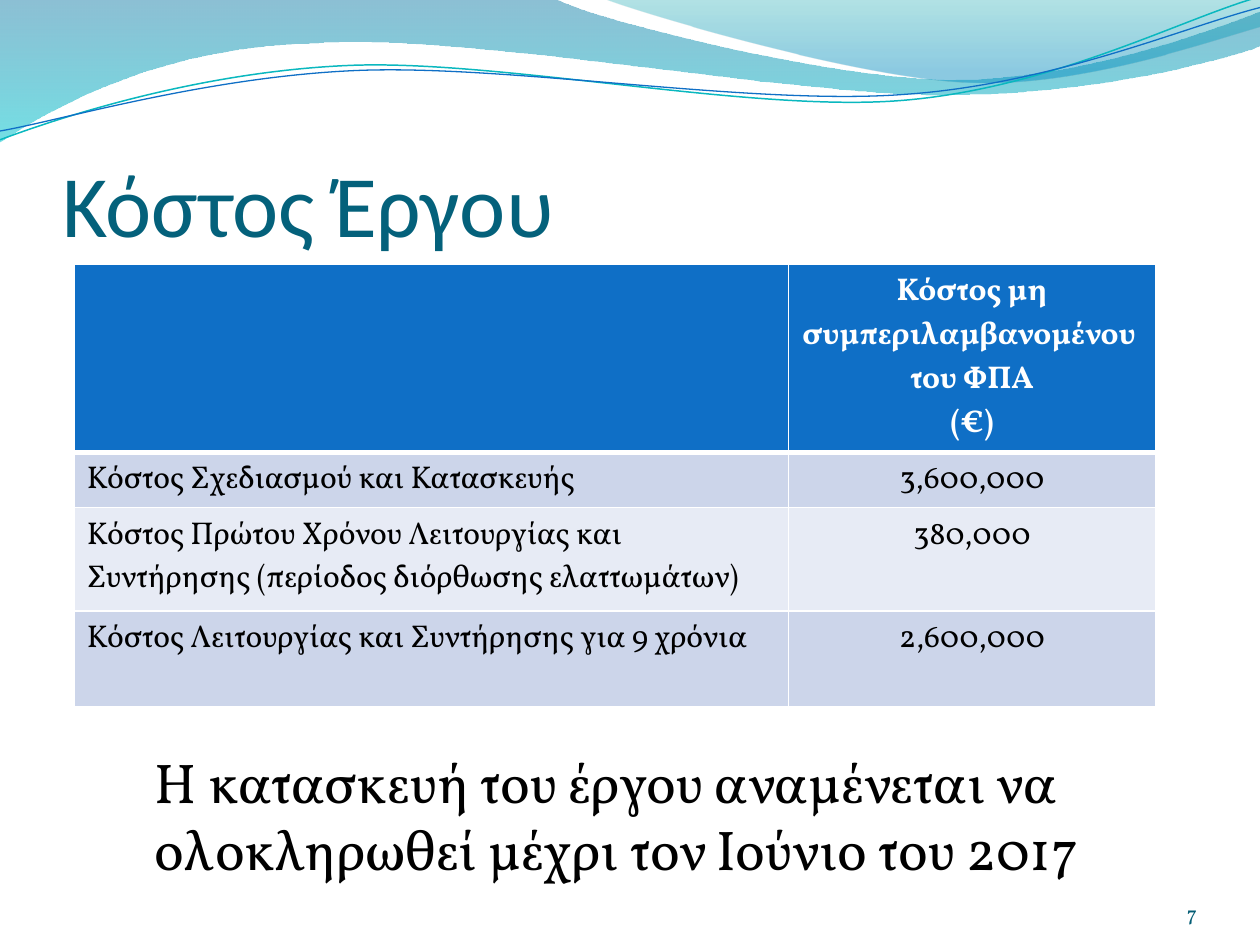
from dataclasses import dataclass

from lxml.etree import SubElement
from pptx import Presentation
from pptx.dml.color import RGBColor
from pptx.enum.text import MSO_ANCHOR, PP_ALIGN
from pptx.oxml.ns import qn
from pptx.util import Inches, Pt

COLUMNS, ROWS = 100, 75  # slide grid, with square modules
MODULE = Inches(0.1)


@dataclass(frozen=True)
class Theme:
    heading_font: str = "Calibri"
    body_font: str = "Vollkorn"
    title_size: int = 50
    body_size: int = 32
    table_size: int = 18
    number_size: int = 12
    title: str = "04617B"
    number: str = "045D75"
    text: str = "000000"
    white: str = "FFFFFF"
    header: str = "0F6FC6"
    bands: tuple = ("CCD5EA", "E7EBF5")
    # Gradient stops: position, colour, opacity in percent
    back_wave: tuple = ((0, "0074A1", 45), (1, "00C6CF", 55))
    front_wave: tuple = ((0, "00A1A9", 30), (0.8, "008BBF", 45))
    teal_line: str = "0AB8BF"
    blue_line: str = "0F6FC6"


THEME = Theme()

# Outlines in grid modules: a pair is a corner, six numbers are a Bézier curve
BACK_WAVE = [
    (0, 0), (44, -0.1), (47.6, 1.7, 66.4, 6.3, 75.8, 6.3),
    (85.3, 6.3, 95.8, 2.6, 100, 0.9), (100.1, 3.6),
    (98.3, 4.4, 87, 7.6, 74.6, 7.5), (62.2, 7.5, 38.2, 2.8, 25.7, 3.4),
    (12.9, 3.6, 4.6, 8.3, -0.1, 11.3), (0, 0),
]
FRONT_WAVE = [
    (47.9, -0.1), (50.9, 1.1, 68.2, 6.2, 76.9, 6.5),
    (85.6, 6.9, 96.1, 3.2, 100, 2.1), (100, 0), (47.9, -0.1),
]
TEAL_LINE = [
    (0, 11.1), (4.8, 9.3, 15.8, 5.7, 27.7, 5.2),
    (39.5, 4.7, 59.3, 8.9, 71.3, 8), (83.3, 7.1, 93.8, 1.5, 99.8, -0.2),
]
BLUE_LINE = [
    (0, 10.4), (4.7, 9.6, 16.4, 6.1, 28.3, 5.6),
    (40.3, 5.1, 59.7, 8.4, 71.7, 7.5), (83.6, 6.7, 94.1, 2.1, 100, 0.6),
]

COSTS = [
    ("", "Κόστος μη συμπεριλαμβανομένου \nτου ΦΠΑ\n(€)"),
    ("Κόστος Σχεδιασμού και Κατασκευής", "3,600,000"),
    ("Κόστος Πρώτου Χρόνου Λειτουργίας και Συντήρησης "
     "(περίοδος διόρθωσης ελαττωμάτων)", "380,000"),
    ("Κόστος Λειτουργίας και Συντήρησης για 9 χρόνια", "2,600,000"),
]
COLUMN_WEIGHTS = (56.7, 29.1)
ROW_WEIGHTS = (14.9, 4.4, 8.2, 7.6)


def grid(*modules):
    return [round(value * MODULE) for value in modules]


def apply(target, values):
    for name, value in values.items():
        setattr(target, name, value)


def format_text(frame, size, color, font=THEME.body_font, bold=False,
                align=PP_ALIGN.LEFT):
    for paragraph in frame.paragraphs:
        paragraph.alignment = align
        apply(paragraph.font, {"name": font, "size": Pt(size), "bold": bold})
        paragraph.font.color.rgb = RGBColor.from_string(color)


def add_text(slide, box, text, frame_values, **text_format):
    frame = slide.shapes.add_textbox(*grid(*box)).text_frame
    frame.text = text
    apply(frame, {"word_wrap": True, **frame_values})
    format_text(frame, **text_format)


# Waves along the top edge
def add_outline(slide, box, outline, close):
    left, top = box[:2]
    points = [grid(left + step[i], top + step[i + 1])
              for step in outline for i in range(0, len(step), 2)]
    builder = slide.shapes.build_freeform(*points[0])
    builder.add_line_segments(points[1:], close=close)
    shape = builder.convert_to_shape()
    shape.shadow.inherit = False
    # Join each run of three segments that belongs to a curve
    segments = shape._element.iter(qn("a:lnTo"))
    segments = iter(list(segments))
    for step in outline[1:]:
        first = next(segments)
        if len(step) == 6:
            first.tag = qn("a:cubicBezTo")
            for _ in range(2):
                control = next(segments)
                first.append(control[0])
                control.getparent().remove(control)
    return shape


def add_waves(slide, box):
    for outline, stops in ((BACK_WAVE, THEME.back_wave), (FRONT_WAVE, THEME.front_wave)):
        wave = add_outline(slide, box, outline, close=True)
        wave.line.fill.background()
        wave.fill.gradient()
        wave.fill.gradient_angle = 270
        for stop, (position, color, _) in zip(wave.fill.gradient_stops, stops):
            stop.position = position
            stop.color.rgb = RGBColor.from_string(color)
        colors = wave.fill._xPr.iter(qn("a:srgbClr"))
        for element, (_, _, opacity) in zip(colors, stops):
            SubElement(element, qn("a:alpha"), val=str(opacity * 1000))
    for outline, color, width in ((TEAL_LINE, THEME.teal_line, 0.85),
                                  (BLUE_LINE, THEME.blue_line, 0.75)):
        strand = add_outline(slide, box, outline, close=False)
        strand.fill.background()
        strand.line.color.rgb = RGBColor.from_string(color)
        strand.line.width = Pt(width)


# Title
def add_title(slide, box):
    add_text(slide, box, "Κόστος Έργου",
             {"vertical_anchor": MSO_ANCHOR.BOTTOM, "margin_left": 0,
              "margin_right": 0, "margin_bottom": 0},
             size=THEME.title_size, color=THEME.title, font=THEME.heading_font)


# Cost table
def set_borders(cell, widths):
    properties = cell._tc.get_or_add_tcPr()
    for index, (side, width) in enumerate(widths.items()):
        line = properties.makeelement(qn(f"a:ln{side}"), {"w": str(Pt(width))})
        SubElement(SubElement(line, qn("a:solidFill")), qn("a:srgbClr"), val=THEME.white)
        properties.insert(index, line)


def add_cost_table(slide, box):
    table = slide.shapes.add_table(len(COSTS), 2, *grid(*box)).table
    width, height = box[2:]
    for column, weight in zip(table.columns, COLUMN_WEIGHTS):
        column.width = grid(width * weight / sum(COLUMN_WEIGHTS))[0]
    for row, weight in zip(table.rows, ROW_WEIGHTS):
        row.height = grid(height * weight / sum(ROW_WEIGHTS))[0]
    for r, cost in enumerate(COSTS):
        header = r == 0
        fill = THEME.header if header else THEME.bands[(r - 1) % 2]
        for c, text in enumerate(cost):
            cell = table.cell(r, c)
            cell.text = text
            cell.fill.solid()
            cell.fill.fore_color.rgb = RGBColor.from_string(fill)
            format_text(cell.text_frame, THEME.table_size,
                        THEME.white if header else THEME.text, bold=header,
                        align=PP_ALIGN.CENTER if c else PP_ALIGN.LEFT)
            set_borders(cell, {"L": 1, "R": 1, "T": 3 if r == 1 else 1,
                               "B": 3 if header else 1})


# Completion date
def add_statement(slide, box):
    add_text(slide, box,
             "Η κατασκευή του έργου αναμένεται να ολοκληρωθεί μέχρι τον Ιούνιο του 2017",
             {"margin_left": Inches(0.4)}, size=THEME.body_size, color=THEME.text)


# Slide number
def add_number(slide, box):
    add_text(slide, box, "7",
             {"vertical_anchor": MSO_ANCHOR.BOTTOM, "margin_left": 0, "margin_top": 0,
              "margin_right": 0, "margin_bottom": 0},
             size=THEME.number_size, color=THEME.number, align=PP_ALIGN.RIGHT)


def main():
    deck = Presentation()
    deck.slide_width, deck.slide_height = grid(COLUMNS, ROWS)
    slide = deck.slides.add_slide(deck.slide_layouts[6])
    add_waves(slide, (0, 0, COLUMNS, 11.4))
    add_title(slide, (5, 7.7, 90, 12.5))
    add_cost_table(slide, (5.9, 21, 85.8, 35.1))
    add_statement(slide, (8.3, 58.8, 79.5, 11.8))
    add_number(slide, (86.7, 69.5, 8.3, 4))
    deck.save("out.pptx")


if __name__ == "__main__":
    main()
